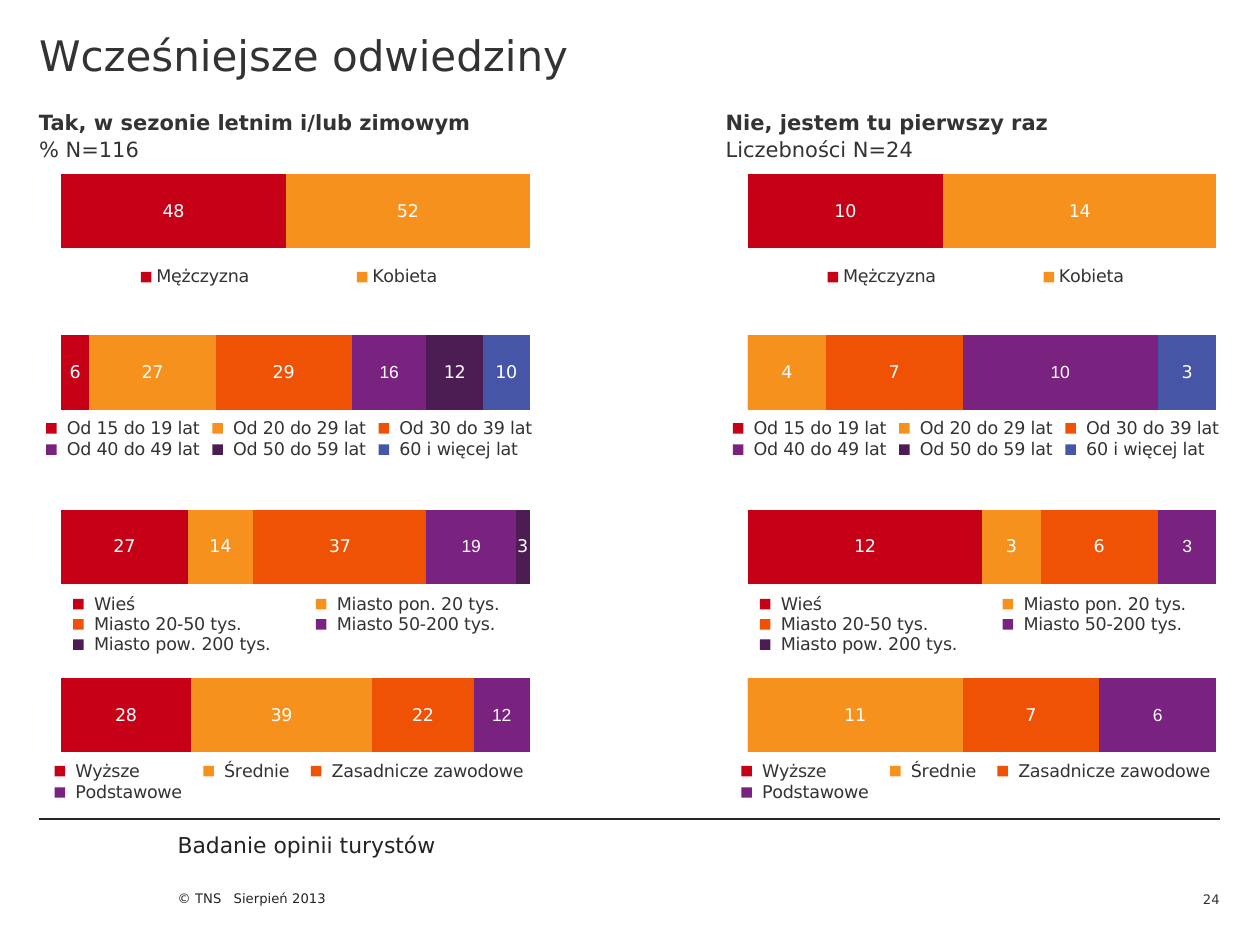
from lxml.etree import SubElement
from pptx import Presentation
from pptx.chart.data import CategoryChartData
from pptx.dml.color import RGBColor
from pptx.enum.chart import XL_CHART_TYPE as ChartType
from pptx.enum.chart import XL_LEGEND_POSITION as LegendPosition
from pptx.enum.chart import XL_TICK_LABEL_POSITION as TickLabels
from pptx.enum.chart import XL_TICK_MARK as TickMark
from pptx.enum.text import MSO_ANCHOR as Anchor
from pptx.enum.text import MSO_AUTO_SIZE as AutoSize
from pptx.enum.text import PP_ALIGN as Align
from pptx.oxml.ns import qn
from pptx.util import Pt

FONT = "DejaVu Sans"
DARK, FOOTER, WHITE = "333333", "232323", "FFFFFF"
PALETTE = ["C50017", "F7911E", "EF5205", "7A2280", "4C1D52", "4655A5"]
COLUMN_LEFTS = [22.3, 414.7]
CHART_WIDTH, CHART_HEIGHT = 285.8, 90
PLOT_X, PLOT_WIDTH, PLOT_HEIGHT = 0.044, 0.937, 0.563

HEADINGS = [
    ("Tak, w sezonie letnim i/lub zimowym", "% N=116"),
    ("Nie, jestem tu pierwszy raz", "Liczebności N=24"),
]
# Each row: chart top, plot y, plot target, legend y and height, names, values per column
ROWS = [
    (81.4, 0.155, "outer", (0.77, 0.17), ["Mężczyzna", "Kobieta"], [[48, 52], [10, 14]]),
    (173.5, 0.155, "outer", (0.72, 0.28),
     [" Od 15 do 19 lat", " Od 20 do 29 lat", " Od 30 do 39 lat",
      " Od 40 do 49 lat", " Od 50 do 59 lat", " 60 i więcej lat"],
     [[6, 27, 29, 16, 12, 10], [0, 4, 7, 10, 0, 3]]),
    (284.4, 0.032, "inner", (0.61, 0.39),
     [" Wieś", " Miasto pon. 20 tys. ", " Miasto 20-50 tys. ",
      " Miasto 50-200 tys. ", " Miasto pow. 200 tys. "],
     [[27, 14, 37, 19, 3], [12, 3, 6, 3, 0]]),
    (369.4, 0.155, "outer", (0.72, 0.28),
     [" Wyższe", " Średnie", " Zasadnicze zawodowe", " Podstawowe"],
     [[28, 39, 22, 12], [0, 11, 7, 6]]),
]


def rgb(value):
    """Return the colour for a hex string."""
    return RGBColor.from_string(value)


def style_font(font, size, color, name=FONT, bold=False):
    """Set size, colour, name and weight of a font."""
    font.size, font.name, font.bold = Pt(size), name, bold
    font.color.rgb = rgb(color)


def fill_text(shape, text, size, color, bold=False, anchor=Anchor.TOP,
              align=Align.LEFT, top=0, bottom=0):
    """Write one formatted line into a shape."""
    frame = shape.text_frame
    frame.text = text
    frame.word_wrap = True
    frame.auto_size = AutoSize.NONE
    frame.vertical_anchor = anchor
    frame.margin_left = frame.margin_right = 0
    frame.margin_top, frame.margin_bottom = Pt(top), Pt(bottom)
    paragraph = frame.paragraphs[0]
    paragraph.alignment = align
    style_font(paragraph.runs[0].font, size, color, bold=bold)


def add_text(slide, box, text, size, color, **options):
    """Add a text box and return it."""
    shape = slide.shapes.add_textbox(*map(Pt, box))
    fill_text(shape, text, size, color, **options)
    return shape


def add_tab_stop(shape, position):
    """Give the first paragraph a left tab stop."""
    properties = shape.text_frame.paragraphs[0]._p.get_or_add_pPr()
    stops = SubElement(properties, qn("a:tabLst"))
    SubElement(stops, qn("a:tab"), pos=str(Pt(position)), algn="l")


def add_rule(slide, left, right, y):
    """Draw the thin line above the footer."""
    line = slide.shapes.add_connector(1, Pt(left), Pt(y), Pt(right), Pt(y))
    line.line.color.rgb = rgb("262626")
    line.line.width = Pt(0.75)
    SubElement(line._element.spPr, qn("a:effectLst"))


def set_layout(element, target, x, y, width, height):
    """Place a plot area or legend by fractions of the chart."""
    layout = element.find(qn("c:layout"))
    if layout is None:
        layout = SubElement(element, qn("c:layout"))
        position = element.find(qn("c:legendPos"))
        if position is None:
            element.insert(0, layout)
        else:
            position.addnext(layout)
    manual = SubElement(layout, qn("c:manualLayout"))
    settings = [("xMode", "edge"), ("yMode", "edge"),
                ("x", x), ("y", y), ("w", width), ("h", height)]
    if target == "inner":
        settings.insert(0, ("layoutTarget", target))
    for tag, value in settings:
        SubElement(manual, qn(f"c:{tag}"), val=str(value))


def style_series(series, color, label_font):
    """Colour one bar segment and label it unless it is empty."""
    series.format.fill.solid()
    series.format.fill.fore_color.rgb = rgb(color)
    if series.values[0]:
        labels = series.data_labels
        labels.show_value = True
        labels.number_format, labels.number_format_is_linked = "#,##0", False
        style_font(labels.font, 10, WHITE, label_font)


def hide_axes(chart):
    """Leave only the bar visible in the plot."""
    chart.category_axis.visible = False
    chart.category_axis.reverse_order = True
    axis = chart.value_axis
    axis.has_major_gridlines = False
    axis.major_tick_mark = axis.minor_tick_mark = TickMark.NONE
    axis.tick_label_position = TickLabels.NONE
    axis.format.line.fill.background()


def add_share_bar(slide, left, top, names, values, plot_y, target, legend_box):
    """Add a single stacked bar with its legend."""
    data = CategoryChartData()
    data.categories = ["1"]
    for name, value in zip(names, values):
        data.add_series(name, [value])
    chart = slide.shapes.add_chart(
        ChartType.BAR_STACKED_100, Pt(left), Pt(top),
        Pt(CHART_WIDTH), Pt(CHART_HEIGHT), data).chart
    style_font(chart.font, 18.1, "000000", "Arial", True)
    chart.has_title = False
    plot = chart.plots[0]
    plot.gap_width, plot.overlap, plot.vary_by_categories = 19, 100, False
    for series, color in zip(plot.series, PALETTE):
        style_series(series, color, "Arial" if color == PALETTE[3] else FONT)
    hide_axes(chart)
    chart.has_legend = True
    legend = chart.legend
    legend.position, legend.include_in_layout = LegendPosition.BOTTOM, False
    style_font(legend.font, 10, DARK)
    plot_area = chart._chartSpace.chart.plotArea
    set_layout(plot_area, target, PLOT_X, plot_y, PLOT_WIDTH, PLOT_HEIGHT)
    set_layout(legend._element, "outer", 0, legend_box[0], 1, legend_box[1])


def add_title(slide, text):
    """Move and format the title placeholder."""
    title = slide.shapes.title
    title.left, title.top, title.width, title.height = map(Pt, (22.3, 0, 674.6, 81.4))
    fill_text(title, text, 24, DARK, top=16.6)


def add_footer(slide):
    """Add the rule, study name, copyright line and page number."""
    add_rule(slide, 22.3, 697, 468)
    add_text(slide, (101.5, 475.2, 238.3, 15.1), "Badanie opinii turystów", 12.5, FOOTER)
    copyright_line = add_text(slide, (101.5, 498.2, 200.2, 41.8), "© TNS\tSierpień 2013",
                              7.5, FOOTER, anchor=Anchor.BOTTOM, bottom=22.3)
    add_tab_stop(copyright_line, 32)
    add_text(slide, (657.4, 498.2, 39.6, 20.2), "24", 7.5, DARK,
             anchor=Anchor.BOTTOM, align=Align.RIGHT)


def main():
    """Build the slide and save it."""
    presentation = Presentation()
    presentation.slide_width, presentation.slide_height = Pt(720), Pt(540)
    slide = presentation.slides.add_slide(presentation.slide_layouts[5])
    add_title(slide, "Wcześniejsze odwiedziny")
    add_footer(slide)
    for column, (left, (heading, base)) in enumerate(zip(COLUMN_LEFTS, HEADINGS)):
        add_text(slide, (left, 62.6, CHART_WIDTH, 17.3), heading, 12, DARK, bold=True)
        add_text(slide, (left, 69.1, 129, 32.4), base, 12, DARK, anchor=Anchor.MIDDLE)
        for top, plot_y, target, legend_box, names, values in ROWS:
            add_share_bar(slide, left, top, names, values[column],
                          plot_y, target, legend_box)
    presentation.save("out.pptx")


if __name__ == "__main__":
    main()
